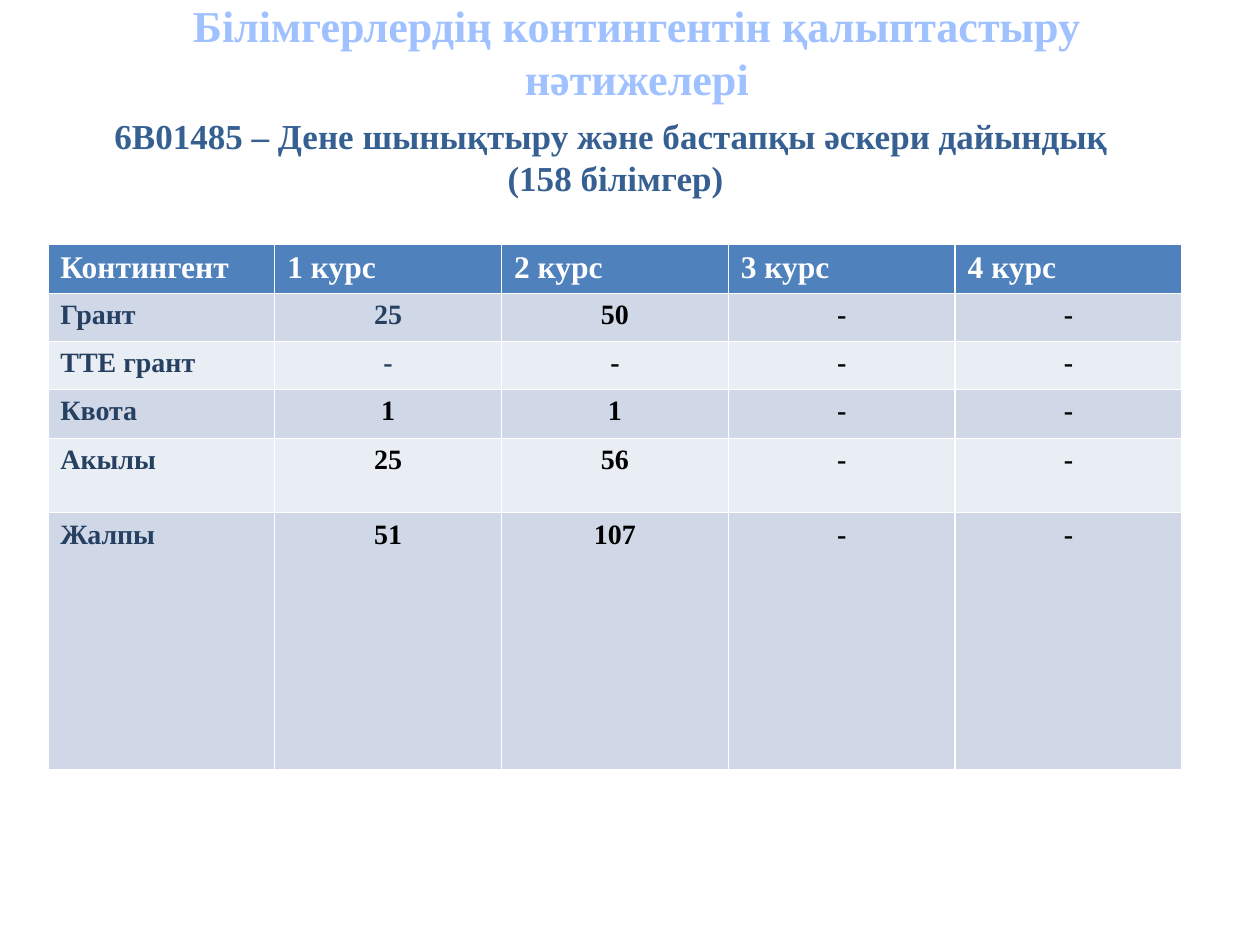
from pptx import Presentation
from pptx.dml.color import RGBColor
from pptx.enum.text import MSO_ANCHOR, MSO_AUTO_SIZE, PP_ALIGN
from pptx.util import Inches, Pt

TITLE = "Білімгерлердің контингентін қалыптастыру нәтижелері"
COURSE = ["6В01485 – Дене шынықтыру және бастапқы әскери дайындық ", "(158 білімгер)"]
ROWS = [
    ("Контингент", "1 курс", "2 курс", "3 курс", "4 курс"),
    ("Грант", "25", "50", "-", "-"),
    ("ТТЕ грант", "-", "-", "-", "-"),
    ("Квота", "1", "1", "-", "-"),
    ("Акылы", "25", "56", "-", "-"),
    ("Жалпы", "51", "107", "-", "-"),
]
HEIGHTS = [0.39, 0.38, 0.38, 0.39, 0.59, 2.04]
NAVY_CELLS = {(1, 1), (2, 1)}

FONT = "Times New Roman"
SKY = RGBColor(0xA0, 0xC1, 0xFF)
STEEL = RGBColor(0x37, 0x60, 0x92)
NAVY = RGBColor(0x25, 0x40, 0x61)
BLUE = RGBColor(0x4F, 0x81, 0xBD)
WHITE = RGBColor(0xFF, 0xFF, 0xFF)
BLACK = RGBColor(0, 0, 0)
BANDS = [RGBColor(0xE9, 0xED, 0xF4), RGBColor(0xD0, 0xD8, 0xE8)]
LEFT, CENTER = PP_ALIGN.LEFT, PP_ALIGN.CENTER
MIDDLE, NO_FIT = MSO_ANCHOR.MIDDLE, MSO_AUTO_SIZE.NONE


def style(frame, size, color, align=CENTER):
    """Format every paragraph and run of a text frame."""
    for para in frame.paragraphs:
        para.alignment = align
        for run in para.runs:
            font = run.font
            font.name, font.size, font.bold = FONT, Pt(size), True
            font.color.rgb = color


def place(shape, *box):
    """Move and size a shape in inches."""
    shape.left, shape.top, shape.width, shape.height = map(Inches, box)


def add_table(slide):
    """Build the table of students by year and funding."""
    shape = slide.shapes.add_table(
        len(ROWS), len(ROWS[0]), Inches(0.38), Inches(1.94),
        Inches(9), Inches(sum(HEIGHTS)))
    table = shape.table
    for r, (row, height) in enumerate(zip(ROWS, HEIGHTS)):
        table.rows[r].height = Inches(height)
        for c, text in enumerate(row):
            cell = table.cell(r, c)
            cell.text_frame.text = text
            cell.fill.solid()
            cell.fill.fore_color.rgb = BANDS[r % 2] if r else BLUE
            if r == 0:
                style(cell.text_frame, 18, WHITE, LEFT)
            else:
                color = NAVY if c == 0 or (r, c) in NAVY_CELLS else BLACK
                style(cell.text_frame, 16, color, CENTER if c else LEFT)


def main():
    """Build and save the slide."""
    deck = Presentation()
    deck.slide_width, deck.slide_height = Inches(10), Inches(7.5)
    slide = deck.slides.add_slide(deck.slide_layouts[5])

    title = slide.shapes.title
    place(title, 0.5, 0.13, 9.11, 0.55)
    title.text_frame.text = TITLE
    title.text_frame.auto_size = NO_FIT
    title.text_frame.vertical_anchor = MIDDLE
    style(title.text_frame, 25.2, SKY)

    add_table(slide)

    box = slide.shapes.add_textbox(0, 0, 0, 0)
    place(box, 0.28, 0.86, 9.21, 0.77)
    box.text_frame.word_wrap = True
    box.text_frame.text = "\n".join(COURSE)
    style(box.text_frame, 20, STEEL)

    deck.save("out.pptx")


if __name__ == "__main__":
    main()
